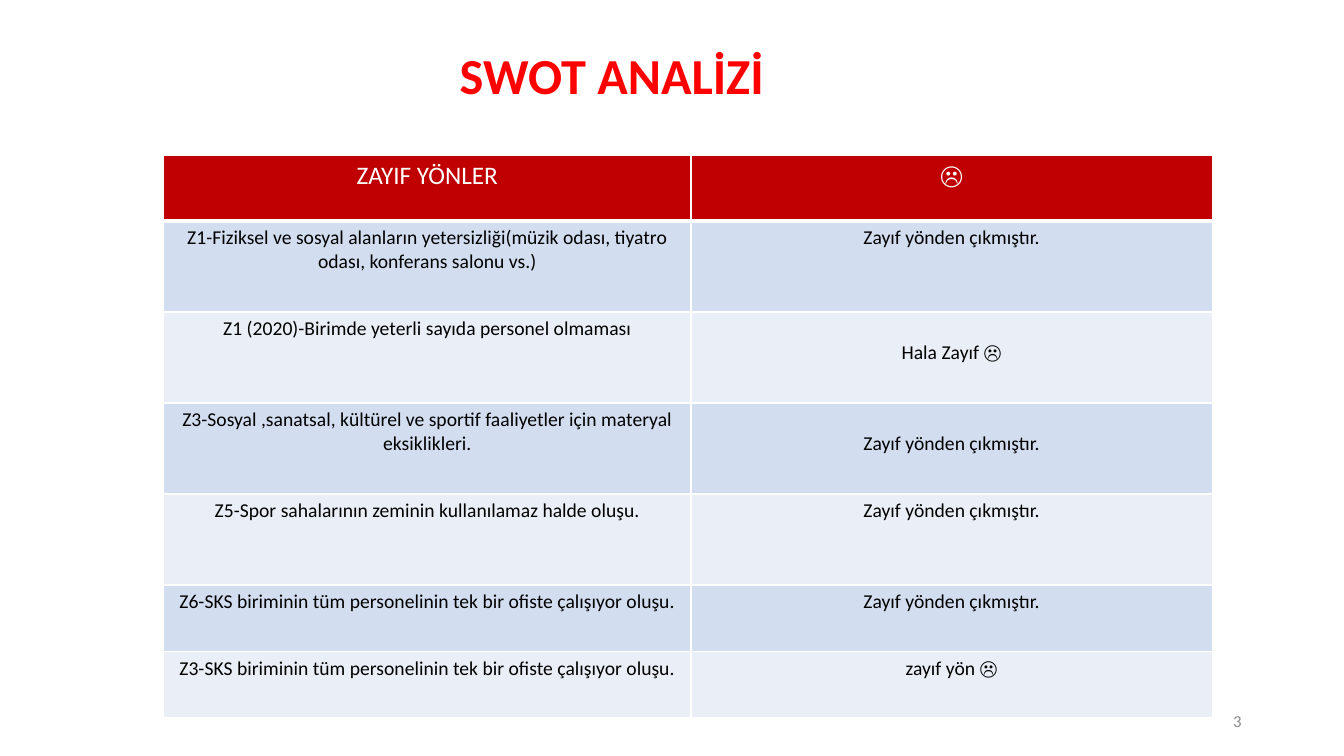
from lxml import etree
from pptx import Presentation
from pptx import util as u
from pptx.dml.color import RGBColor
from pptx.enum import text
from pptx.oxml import ns

Pt = u.Pt


def add_run(p, wording, size, color, bold=False):
    r = p.add_run()
    r.text = wording
    r.font.name = "Calibri"
    r.font.size = Pt(size)
    r.font.bold = bold
    r.font.color.rgb = RGBColor.from_string(color)


def add_border(cell, side, width):
    ln = etree.SubElement(cell._tc.get_or_add_tcPr(), ns.qn("a:" + side), w=str(Pt(width)))
    fill = etree.SubElement(ln, ns.qn("a:solidFill"))
    etree.SubElement(fill, ns.qn("a:srgbClr"), val="FFFFFF")


prs = Presentation()
prs.slide_width, prs.slide_height = Pt(960), Pt(540)
s = prs.slides.add_slide(prs.slide_layouts[5])

title = s.shapes.title
title.left, title.top, title.width, title.height = Pt(162), Pt(28), Pt(550), Pt(51)
tf = title.text_frame
tf.auto_size = text.MSO_AUTO_SIZE.NONE
tf.vertical_anchor = text.MSO_ANCHOR.TOP
p = tf.paragraphs[0]
p.alignment = text.PP_ALIGN.CENTER
add_run(p, "SWOT ANALİZİ", 36, "FF0000", True)

number = s.shapes.add_textbox(Pt(678), Pt(500.5), Pt(216), Pt(28.8))
tf = number.text_frame
tf.word_wrap = True
tf.vertical_anchor = text.MSO_ANCHOR.MIDDLE
p = tf.paragraphs[0]
p.alignment = text.PP_ALIGN.RIGHT
add_run(p, "3", 12, "8C8C8C")

resolved = "Zayıf yönden çıkmıştır."
rows = [
    (46.8, "ZAYIF YÖNLER", "☹"),
    (65, "Z1-Fiziksel ve sosyal alanların yetersizliği(müzik odası, tiyatro odası, konferans salonu vs.)", resolved),
    (65, "Z1 (2020)-Birimde yeterli sayıda personel olmaması", "Hala Zayıf ☹"),
    (65, "Z3-Sosyal ,sanatsal, kültürel ve sportif faaliyetler için materyal eksiklikleri.", resolved),
    (65, "Z5-Spor sahalarının zeminin kullanılamaz halde oluşu.", resolved),
    (47.5, "Z6-SKS biriminin tüm personelinin tek bir ofiste çalışıyor oluşu.", resolved),
    (47.5, "Z3-SKS biriminin tüm personelinin tek bir ofiste çalışıyor oluşu.", "zayıf yön ☹"),
]
lowered = [(2, 1), (3, 1)]

table = s.shapes.add_table(len(rows), 2, Pt(117), Pt(111), Pt(749), Pt(401.8)).table
table.columns[0].width, table.columns[1].width = Pt(376.5), Pt(372.5)
for i, (height, *wordings) in enumerate(rows):
    table.rows[i].height = Pt(height)
    header = i == 0
    for j, wording in enumerate(wordings):
        cell = table.cell(i, j)
        for side in ("lnL", "lnR", "lnT", "lnB"):
            edge = (i, side) in [(0, "lnB"), (1, "lnT")]
            add_border(cell, side, 3 if edge else 1)
        cell.fill.solid()
        shade = "C00000" if header else ("EAEFF7", "D2DEEF")[i % 2]
        cell.fill.fore_color.rgb = RGBColor.from_string(shade)
        if (i, j) in lowered:
            cell.margin_top = Pt(20.5)
        p = cell.text_frame.paragraphs[0]
        p.alignment = text.PP_ALIGN.CENTER
        add_run(p, wording, 18 if header else 14, "FFFFFF" if header else "000000", header and j == 1)

prs.save("out.pptx")
